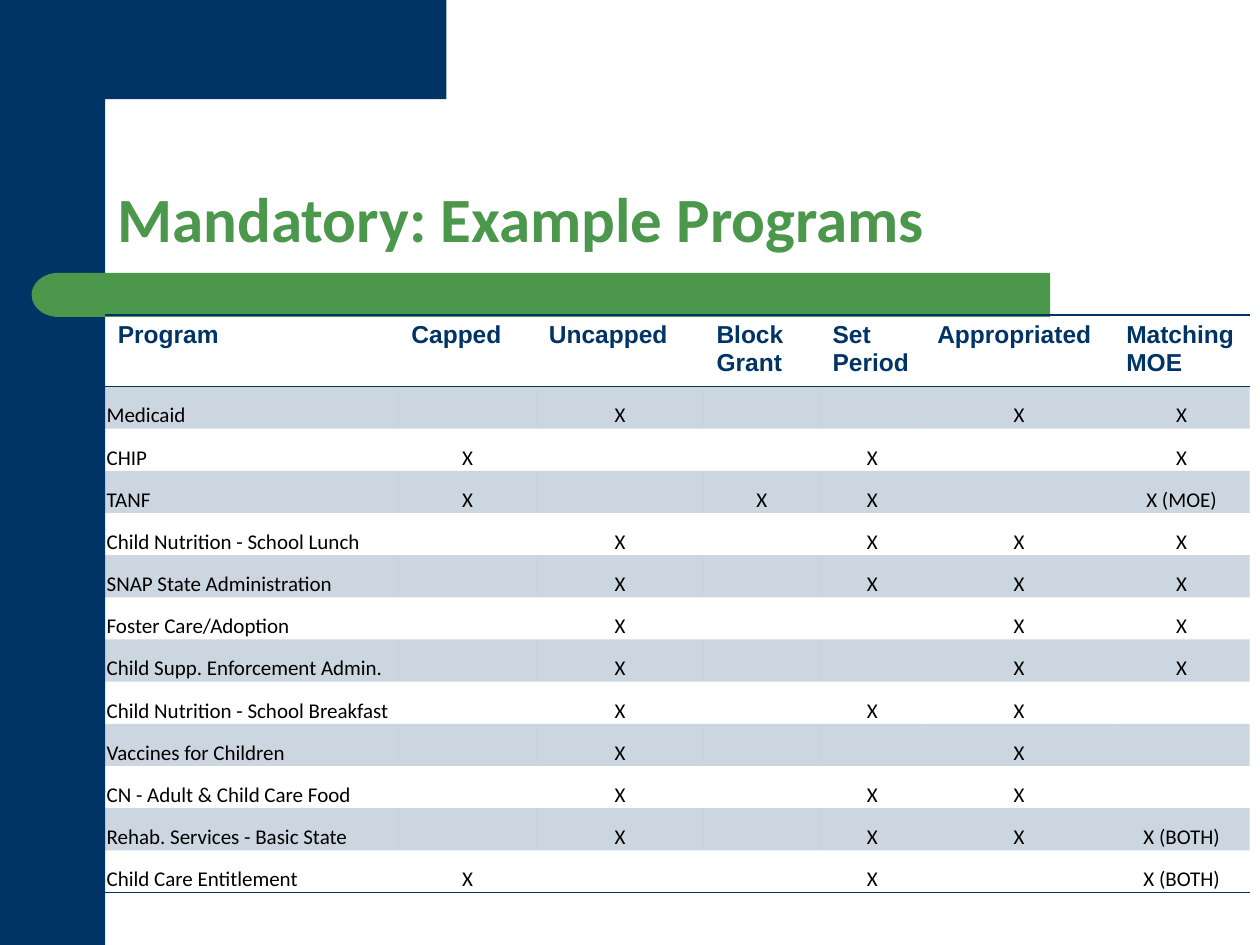
import dataclasses
import math

import lxml.etree
import pptx
import pptx.dml.color
import pptx.enum.shapes
import pptx.enum.text
import pptx.oxml.ns
import pptx.util

Cm = pptx.util.Cm
Pt = pptx.util.Pt
ShapeKind = pptx.enum.shapes.MSO_SHAPE
Align = pptx.enum.text.PP_ALIGN
Anchor = pptx.enum.text.MSO_ANCHOR
qn = pptx.oxml.ns.qn


@dataclasses.dataclass(frozen=True)
class Theme:
    navy: str = "003366"
    green: str = "4B974B"
    black: str = "000000"
    body_font: str = "Calibri"
    header_font: str = "Arial"
    title_size: int = 36
    header_size: int = 14
    body_size: int = 12
    band_opacity: int = 20
    rule_width: int = 1
    plain_table_style: str = "{2D5ABB26-0587-4C30-8999-92F81FD0307C}"


COLUMN_WIDTHS = [5.92, 2.77, 3.38, 2.34, 2.11, 3.81, 2.74]
HEADER_HEIGHT, ROW_HEIGHT = 1.36, 0.85
HEADERS = ["Program", "Capped", "Uncapped", "Block Grant", "Set Period",
           "Appropriated", "Matching MOE"]
PROGRAMS = [
    ["Medicaid", "", "X", "", "", "X", "X"],
    ["CHIP", "X", "", "", "X", "", "X"],
    ["TANF", "X", "", "X", "X", "", "X (MOE)"],
    ["Child Nutrition - School Lunch", "", "X", "", "X", "X", "X"],
    ["SNAP State Administration", "", "X", "", "X", "X", "X"],
    ["Foster Care/Adoption", "", "X", "", "", "X", "X"],
    ["Child Supp. Enforcement Admin.", "", "X", "", "", "X", "X"],
    ["Child Nutrition - School Breakfast", "", "X", "", "X", "X", ""],
    ["Vaccines for Children", "", "X", "", "", "X", ""],
    ["CN - Adult & Child Care Food", "", "X", "", "X", "X", ""],
    ["Rehab. Services - Basic State", "", "X", "", "X", "X", "X (BOTH)"],
    ["Child Care Entitlement", "X", "", "", "X", "", "X (BOTH)"],
]


class SlideBuilder:
    """Draws themed elements on one slide, with lengths in centimetres."""

    def __init__(self, slide, theme):
        self.slide = slide
        self.theme = theme

    def paint(self, shape, color):
        shape.shadow.inherit = False
        shape.fill.solid()
        shape.fill.fore_color.rgb = pptx.dml.color.RGBColor.from_string(color)
        shape.line.fill.background()

    def block(self, kind, left, top, width, height, color):
        shape = self.slide.shapes.add_shape(kind, Cm(left), Cm(top), Cm(width), Cm(height))
        self.paint(shape, color)
        return shape

    def corner(self, left, right, inner_left, inner_top, bottom, radius_x, radius_y):
        center_x, center_y = inner_left + radius_x, inner_top + radius_y
        angles = [math.radians(degrees) for degrees in range(0, 91, 6)]
        curve = [(center_x - radius_x * math.sin(angle), center_y - radius_y * math.cos(angle))
                 for angle in angles]
        outline = [(right, inner_top), *curve, (inner_left, bottom), (left, bottom), (left, 0)]
        builder = self.slide.shapes.build_freeform(right, 0, scale=Cm(1))
        builder.add_line_segments(outline, close=True)
        self.paint(builder.convert_to_shape(), self.theme.navy)

    def text(self, paragraph, content, font, size, color, bold=False):
        run = paragraph.add_run()
        run.text = content
        run.font.name = font
        run.font.size = Pt(size)
        run.font.bold = bold
        run.font.color.rgb = pptx.dml.color.RGBColor.from_string(color)

    def title(self, content, left, top, width, height):
        theme = self.theme
        frame = self.slide.shapes.add_textbox(Cm(left), Cm(top), Cm(width), Cm(height)).text_frame
        frame.word_wrap = True
        frame.vertical_anchor = Anchor.BOTTOM
        paragraph = frame.paragraphs[0]
        paragraph.line_spacing = 0.9
        self.text(paragraph, content, theme.body_font, theme.title_size, theme.green, True)

    def border(self, cell, side):
        properties = cell._tc.get_or_add_tcPr()
        line = lxml.etree.SubElement(properties, qn(f"a:ln{side}"), w=str(Pt(self.theme.rule_width)))
        fill = lxml.etree.SubElement(line, qn("a:solidFill"))
        lxml.etree.SubElement(fill, qn("a:srgbClr"), val=self.theme.navy)

    def band(self, cell):
        cell.fill.solid()
        cell.fill.fore_color.rgb = pptx.dml.color.RGBColor.from_string(self.theme.navy)
        color = cell._tc.tcPr.find(".//" + qn("a:solidFill") + "/" + qn("a:srgbClr"))
        lxml.etree.SubElement(color, qn("a:alpha"), val=str(self.theme.band_opacity * 1000))

    def header_cell(self, cell, content):
        theme = self.theme
        for side in "TB":
            self.border(cell, side)
        cell.fill.background()
        self.text(cell.text_frame.paragraphs[0], content, theme.header_font,
                  theme.header_size, theme.navy, True)

    def body_cell(self, cell, content, centered, banded, last):
        theme = self.theme
        cell.margin_left = cell.margin_right = cell.margin_top = Cm(0.03)
        cell.margin_bottom = 0
        cell.vertical_anchor = Anchor.BOTTOM
        if last:
            self.border(cell, "B")
        if banded:
            self.band(cell)
        else:
            cell.fill.background()
        if content:
            paragraph = cell.text_frame.paragraphs[0]
            paragraph.alignment = Align.CENTER if centered else Align.LEFT
            self.text(paragraph, content, theme.body_font, theme.body_size, theme.black)

    def table(self, left, top, widths, headers, records):
        height = HEADER_HEIGHT + ROW_HEIGHT * len(records)
        table = self.slide.shapes.add_table(len(records) + 1, len(widths), Cm(left), Cm(top),
                                            Cm(sum(widths)), Cm(height)).table
        table.first_row = table.horz_banding = False
        table._tbl.tblPr.find(qn("a:tableStyleId")).text = self.theme.plain_table_style
        for column, width in zip(table.columns, widths):
            column.width = Cm(width)
        for index, row in enumerate(table.rows):
            row.height = Cm(ROW_HEIGHT if index else HEADER_HEIGHT)
        for column, content in enumerate(headers):
            self.header_cell(table.cell(0, column), content)
        for row, record in enumerate(records, start=1):
            for column, content in enumerate(record):
                self.body_cell(table.cell(row, column), content, centered=column > 0,
                               banded=row % 2 == 1, last=row == len(records))


def main():
    presentation = pptx.Presentation()
    presentation.slide_width, presentation.slide_height = Cm(25.4), Cm(19.05)
    theme = Theme()
    builder = SlideBuilder(presentation.slides.add_slide(presentation.slide_layouts[6]), theme)

    builder.block(ShapeKind.RECTANGLE, 0, 0, 2.12, 19.05, theme.navy)
    builder.corner(left=1.27, right=8.89, inner_left=2.12, inner_top=2.12, bottom=3.25,
                   radius_x=0.75, radius_y=0.83)
    bar = builder.block(ShapeKind.ROUNDED_RECTANGLE, 1.69, 5.5, 19.48, 0.89, theme.green)
    bar.adjustments[0] = 0
    cap = builder.block(ShapeKind.FLOWCHART_DELAY, 0.64, 5.5, 1.08, 0.89, theme.green)
    cap._element.spPr.xfrm.set("flipH", "1")
    builder.title("Mandatory: Example Programs", 2.12, 2.12, 22.01, 3.17)
    builder.table(2.12, 6.35, COLUMN_WIDTHS, HEADERS, PROGRAMS)

    presentation.save("out.pptx")


if __name__ == "__main__":
    main()
